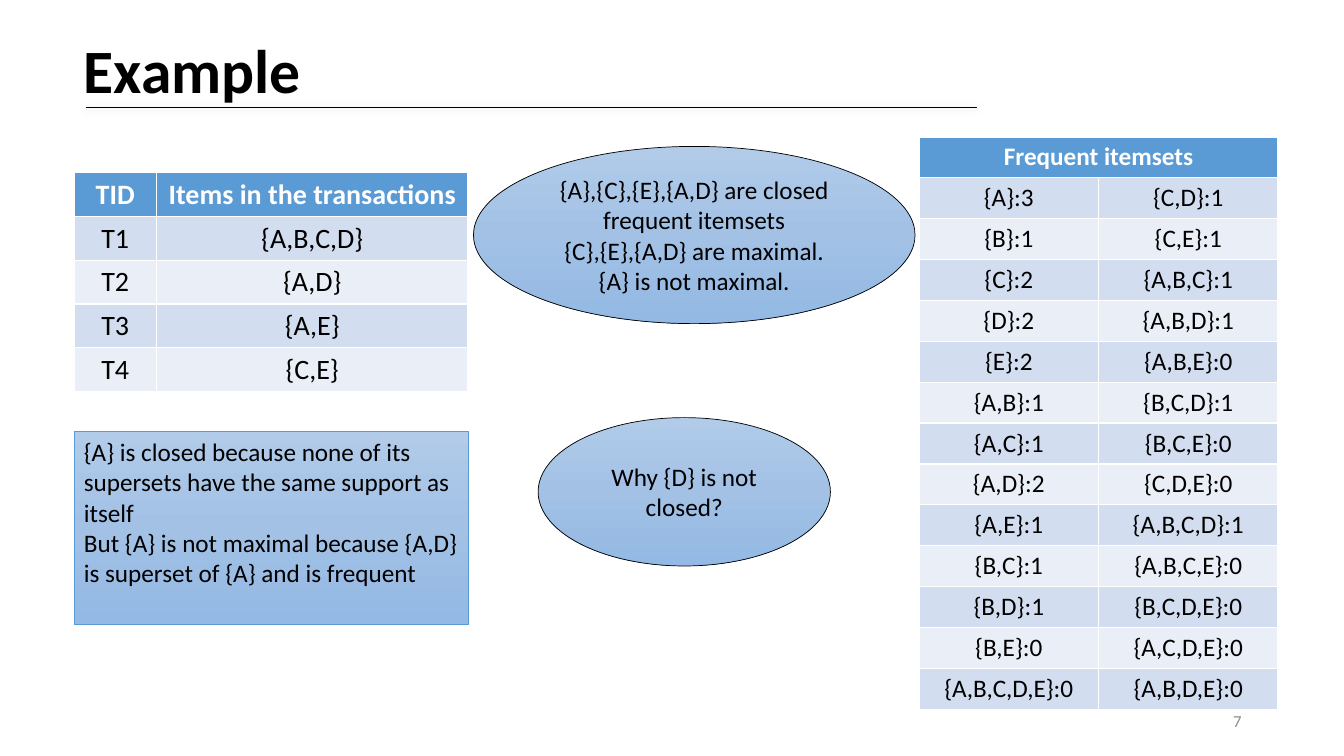
from copy import deepcopy

from lxml import etree
from pptx import Presentation
from pptx.dml.color import RGBColor
from pptx.enum.shapes import MSO_CONNECTOR, MSO_SHAPE
from pptx.enum.text import MSO_ANCHOR, MSO_AUTO_SIZE, PP_ALIGN
from pptx.oxml.ns import qn
from pptx.util import Pt

LEFT, CENTER, RIGHT = PP_ALIGN.LEFT, PP_ALIGN.CENTER, PP_ALIGN.RIGHT
TOP, MIDDLE = MSO_ANCHOR.TOP, MSO_ANCHOR.MIDDLE
GROW = MSO_AUTO_SIZE.SHAPE_TO_FIT_TEXT
RECTANGLE, OVAL = MSO_SHAPE.RECTANGLE, MSO_SHAPE.OVAL
STRAIGHT = MSO_CONNECTOR.STRAIGHT

FONT = "Calibri"
BLACK = RGBColor(0x00, 0x00, 0x00)
WHITE = RGBColor(0xFF, 0xFF, 0xFF)
GRAY = RGBColor(0x8C, 0x8C, 0x8C)
BLUE = RGBColor(0x5B, 0x9B, 0xD5)
BANDS = (RGBColor(0xD2, 0xDE, 0xEF), RGBColor(0xEA, 0xEF, 0xF7))
GRADIENT = (
    (0, RGBColor(0xB1, 0xCB, 0xE9)),
    (0.5, RGBColor(0xA3, 0xC1, 0xE5)),
    (1, RGBColor(0x93, 0xB9, 0xE4)),
)

TRANSACTIONS = [
    ("TID", "Items in the transactions"),
    ("T1", "{A,B,C,D}"),
    ("T2", "{A,D}"),
    ("T3", "{A,E}"),
    ("T4", "{C,E}"),
]
ITEMSETS = [
    ("Frequent itemsets", ""),
    ("{A}:3", "{C,D}:1"),
    ("{B}:1", "{C,E}:1"),
    ("{C}:2", "{A,B,C}:1"),
    ("{D}:2", "{A,B,D}:1"),
    ("{E}:2", "{A,B,E}:0"),
    ("{A,B}:1", "{B,C,D}:1"),
    ("{A,C}:1", "{B,C,E}:0"),
    ("{A,D}:2", "{C,D,E}:0"),
    ("{A,E}:1", "{A,B,C,D}:1"),
    ("{B,C}:1", "{A,B,C,E}:0"),
    ("{B,D}:1", "{B,C,D,E}:0"),
    ("{B,E}:0", "{A,C,D,E}:0"),
    ("{A,B,C,D,E}:0", "{A,B,D,E}:0"),
]


def write(text_frame, lines, size, color=BLACK, bold=False, align=LEFT):
    """Fill a text frame with one paragraph for each line."""
    for index, line in enumerate(lines):
        paragraph = text_frame.paragraphs[0] if index == 0 else text_frame.add_paragraph()
        paragraph.alignment = align
        run = paragraph.add_run()
        run.text = line
        run.font.name = FONT
        run.font.size = Pt(size)
        run.font.bold = bold
        run.font.color.rgb = color


def add_text(slide, box, text, size, **style):
    text_frame = slide.shapes.add_textbox(*map(Pt, box)).text_frame
    text_frame.word_wrap = True
    text_frame.vertical_anchor = MIDDLE
    write(text_frame, [text], size, **style)
    return text_frame


def add_table(slide, left, top, column_widths, row_height, rows, size):
    """Add a table with a blue header; an empty header cell joins the one before it."""
    frame = slide.shapes.add_table(
        len(rows), len(column_widths), Pt(left), Pt(top),
        Pt(sum(column_widths)), Pt(row_height * len(rows)))
    table = frame.table
    for column, width in zip(table.columns, column_widths):
        column.width = Pt(width)
    for row_index, values in enumerate(rows):
        header = row_index == 0
        table.rows[row_index].height = Pt(row_height)
        for column_index, value in enumerate(values):
            cell = table.cell(row_index, column_index)
            cell.fill.solid()
            cell.fill.fore_color.rgb = BLUE if header else BANDS[(row_index - 1) % 2]
            if value:
                write(cell.text_frame, [value], size,
                      color=WHITE if header else BLACK, bold=header, align=CENTER)
            else:
                table.cell(row_index, column_index - 1).merge(cell)


def fill_gradient(shape):
    """Shade the shape from top to bottom through three colours."""
    shape.fill.gradient()
    shape.fill.gradient_angle = 270
    stop_list = shape._element.spPr.find(qn("a:gradFill")).find(qn("a:gsLst"))
    stop_list.insert(1, deepcopy(stop_list[0]))
    for stop, (position, color) in zip(shape.fill.gradient_stops, GRADIENT):
        stop.position = position
        stop.color.rgb = color


def add_note(slide, kind, box, lines, line_color=BLACK, align=CENTER, anchor=MIDDLE):
    shape = slide.shapes.add_shape(kind, *map(Pt, box))
    shape.shadow.inherit = False
    fill_gradient(shape)
    shape.line.color.rgb = line_color
    shape.line.width = Pt(0.5)
    shape.text_frame.word_wrap = True
    shape.text_frame.vertical_anchor = anchor
    write(shape.text_frame, lines, 18, align=align)
    return shape


def add_title_rule(slide, left, right, top):
    """Draw the line under the title, with a faint soft shadow."""
    rule = slide.shapes.add_connector(STRAIGHT, Pt(left), Pt(top), Pt(right), Pt(top))
    rule.line.color.rgb = BLACK
    rule.line.width = Pt(0.5)
    effects = etree.SubElement(rule._element.spPr, qn("a:effectLst"))
    shadow = etree.SubElement(effects, qn("a:outerShdw"), blurRad=str(Pt(6)),
                              dist="0", dir=str(225 * 60000))
    color = etree.SubElement(shadow, qn("a:srgbClr"), val=str(BLACK))
    etree.SubElement(color, qn("a:alpha"), val="20000")


def main():
    presentation = Presentation()
    presentation.slide_width, presentation.slide_height = Pt(960), Pt(540)
    slide = presentation.slides.add_slide(presentation.slide_layouts[6])

    title = add_text(slide, (52.8, 0, 828, 104.4), "Example", 44, bold=True)
    title.paragraphs[0].line_spacing = 0.9
    add_table(slide, 52.8, 123.4, (59, 222.5), 31.2, TRANSACTIONS, 20)
    add_text(slide, (678, 500.5, 216, 28.75), "7", 12, color=GRAY, align=RIGHT)
    add_table(slide, 656.5, 97.8, (128.2, 128.2), 29.2, ITEMSETS, 18)
    reason = add_note(slide, RECTANGLE, (52.8, 308.2, 281.5, 138), [
        "{A} is closed because none of its supersets have the same support as itself",
        "But {A} is not maximal because {A,D} is superset of {A} and is frequent",
    ], line_color=BLUE, align=LEFT, anchor=TOP)
    reason.text_frame.auto_size = GROW
    add_note(slide, OVAL, (338.2, 104.6, 315.4, 126.6), [
        "{A},{C},{E},{A,D} are closed frequent itemsets",
        "{C},{E},{A,D} are maximal.",
        "{A} is not maximal.",
    ])
    add_note(slide, OVAL, (384.4, 298.3, 208.8, 106), ["Why {D} is not closed?"])
    add_title_rule(slide, 61.2, 697.7, 77)

    presentation.save("out.pptx")


if __name__ == "__main__":
    main()
